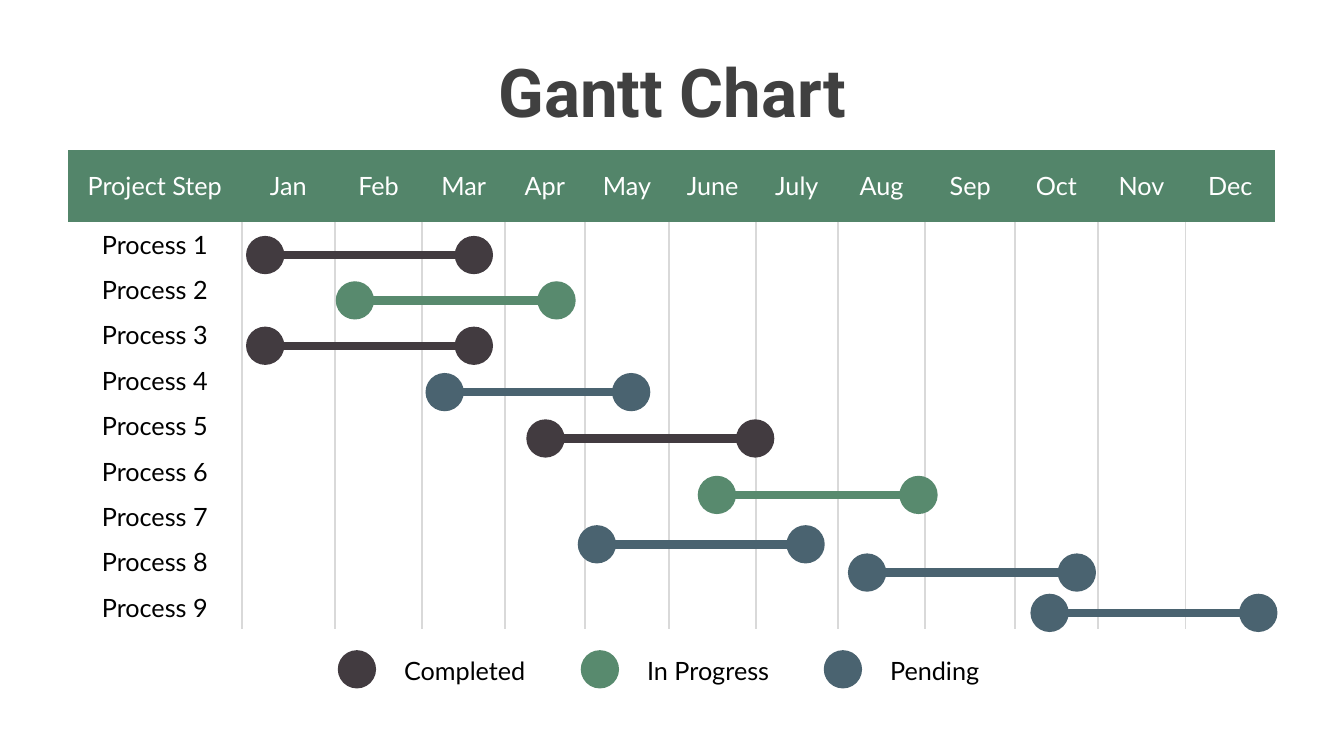
from lxml import etree
from pptx import Presentation
from pptx.dml.color import RGBColor
from pptx.enum.shapes import MSO_CONNECTOR, MSO_SHAPE
from pptx.enum.text import MSO_ANCHOR, PP_ALIGN
from pptx.oxml.ns import qn
from pptx.util import Inches, Pt

STRAIGHT = MSO_CONNECTOR.STRAIGHT
OVAL = MSO_SHAPE.OVAL
MIDDLE = MSO_ANCHOR.MIDDLE
CENTER, LEFT = PP_ALIGN.CENTER, PP_ALIGN.LEFT

WHITE, BLACK, TITLE_GRAY = "FFFFFF", "000000", "404040"
HEADER_GREEN, GRID_GRAY = "53856A", "D9D9D9"
STATUS_COLORS = {"Completed": "423B40", "In Progress": "588A6E", "Pending": "4A6370"}
NO_TABLE_STYLE = "{2D5ABB26-0587-4C30-8999-92F81FD0307C}"

HEADINGS = ["Project Step", "Jan", "Feb", "Mar", "Apr", "May", "June",
            "July", "Aug", "Sep", "Oct", "Nov", "Dec"]
COLUMN_WIDTHS = [1.73, 0.92, 0.87, 0.82, 0.79, 0.84, 0.86, 0.81, 0.87,
                 0.89, 0.82, 0.87, 0.89]
HEADER_HEIGHT, ROW_HEIGHT = 0.71, 0.45
DOT_SIZE = 0.38
LEGEND_LEFT, LEGEND_TOP, LEGEND_STEP, LABEL_OFFSET = 3.35, 6.45, 2.41, 0.56

# Each task: status, centre of first dot, centre of last dot, height on the slide
TASKS = [
    ("Completed", 2.63, 4.7, 2.53),
    ("In Progress", 3.52, 5.52, 2.98),
    ("Completed", 2.63, 4.7, 3.43),
    ("Pending", 4.41, 6.26, 3.89),
    ("Completed", 5.41, 7.49, 4.35),
    ("In Progress", 7.11, 9.11, 4.91),
    ("Pending", 5.92, 7.99, 5.4),
    ("Pending", 8.6, 10.68, 5.68),
    ("Pending", 10.41, 12.48, 6.08),
]


def rgb(color):
    """Turn a hex string into a colour."""
    return RGBColor.from_string(color)


def write_text(frame, text, color, size=18, font="Lato", bold=False, align=LEFT):
    """Write one formatted paragraph into a text frame."""
    paragraph = frame.paragraphs[0]
    paragraph.alignment = align
    run = paragraph.add_run()
    run.text = text
    for attribute, value in {"size": Pt(size), "name": font, "bold": bold}.items():
        setattr(run.font, attribute, value)
    run.font.color.rgb = rgb(color)


def add_title(slide, text):
    """Place and format the slide title."""
    title = slide.shapes.title
    place = {"left": 1.4, "top": 0.44, "width": 10.54, "height": 0.91}
    for attribute, value in place.items():
        setattr(title, attribute, Inches(value))
    title.text_frame.vertical_anchor = MIDDLE
    write_text(title.text_frame, text, TITLE_GRAY, 48, "Roboto", True, CENTER)


def add_border(cell, side, color, width):
    """Draw one border of a table cell."""
    border = etree.SubElement(cell._tc.get_or_add_tcPr(), qn(f"a:ln{side}"),
                              w=str(Pt(width)))
    fill = etree.SubElement(border, qn("a:solidFill"))
    etree.SubElement(fill, qn("a:srgbClr"), val=color)


def format_body_cell(cell, is_first, is_last, is_bottom):
    """Give a body cell month lines inside and white outer edges."""
    edge, month_line = (WHITE, 1), (GRID_GRAY, 1.5)
    add_border(cell, "L", *(edge if is_first else month_line))
    add_border(cell, "R", *(edge if is_last else month_line))
    if is_bottom:
        add_border(cell, "B", *edge)
    cell.fill.background()


def add_schedule_grid(slide):
    """Add the table with month headings and process names."""
    row_count, column_count = len(TASKS) + 1, len(HEADINGS)
    frame = slide.shapes.add_table(
        row_count, column_count, Inches(0.67), Inches(1.49), Inches(12),
        Inches(HEADER_HEIGHT + ROW_HEIGHT * len(TASKS)))
    grid = frame.table
    grid._tbl.tblPr.find(qn("a:tableStyleId")).text = NO_TABLE_STYLE
    grid.horz_banding = False
    for column, width in zip(grid.columns, COLUMN_WIDTHS):
        column.width = Inches(width)
    for index, row in enumerate(grid.rows):
        row.height = Inches(ROW_HEIGHT if index else HEADER_HEIGHT)
    for index, heading in enumerate(HEADINGS):
        cell = grid.cell(0, index)
        cell.vertical_anchor = MIDDLE
        cell.fill.solid()
        cell.fill.fore_color.rgb = rgb(HEADER_GREEN)
        write_text(cell.text_frame, heading, WHITE, align=CENTER)
    for row in range(1, row_count):
        for column in range(column_count):
            format_body_cell(grid.cell(row, column), column == 0,
                             column == column_count - 1, row == row_count - 1)
        process = grid.cell(row, 0)
        process.vertical_anchor = MIDDLE
        write_text(process.text_frame, f"Process {row}", BLACK, align=CENTER)


def add_dot(shapes, center_x, center_y, color):
    """Add a round marker around a centre point."""
    dot = shapes.add_shape(OVAL, Inches(center_x - DOT_SIZE / 2),
                           Inches(center_y - DOT_SIZE / 2),
                           Inches(DOT_SIZE), Inches(DOT_SIZE))
    dot.shadow.inherit = False
    dot.fill.solid()
    dot.fill.fore_color.rgb = rgb(color)
    dot.line.fill.background()


def add_task(slide, status, start, end, height):
    """Add a task bar with a dot at each end."""
    shapes = slide.shapes.add_group_shape().shapes
    color = STATUS_COLORS[status]
    bar = shapes.add_connector(STRAIGHT, Inches(start), Inches(height),
                               Inches(end), Inches(height))
    bar.line.color.rgb = rgb(color)
    bar.line.width = Pt(6)
    etree.SubElement(bar._element.spPr, qn("a:effectLst"))
    for center in (start, end):
        add_dot(shapes, center, height, color)


def add_legend(slide):
    """Add the key to the status colours."""
    shapes = slide.shapes.add_group_shape().shapes
    for index, (status, color) in enumerate(STATUS_COLORS.items()):
        left = LEGEND_LEFT + index * LEGEND_STEP
        add_dot(shapes, left + DOT_SIZE / 2, LEGEND_TOP + DOT_SIZE / 2, color)
        label = shapes.add_textbox(Inches(left + LABEL_OFFSET), Inches(LEGEND_TOP),
                                   Inches(1.5), Inches(0.4))
        label.text_frame.word_wrap = True
        write_text(label.text_frame, status, BLACK)


def main():
    """Build the slide and save it."""
    deck = Presentation()
    deck.slide_width, deck.slide_height = Inches(13.33), Inches(7.5)
    slide = deck.slides.add_slide(deck.slide_layouts[5])
    add_title(slide, "Gantt Chart")
    add_schedule_grid(slide)
    for task in TASKS:
        add_task(slide, *task)
    add_legend(slide)
    deck.save("out.pptx")


if __name__ == "__main__":
    main()
